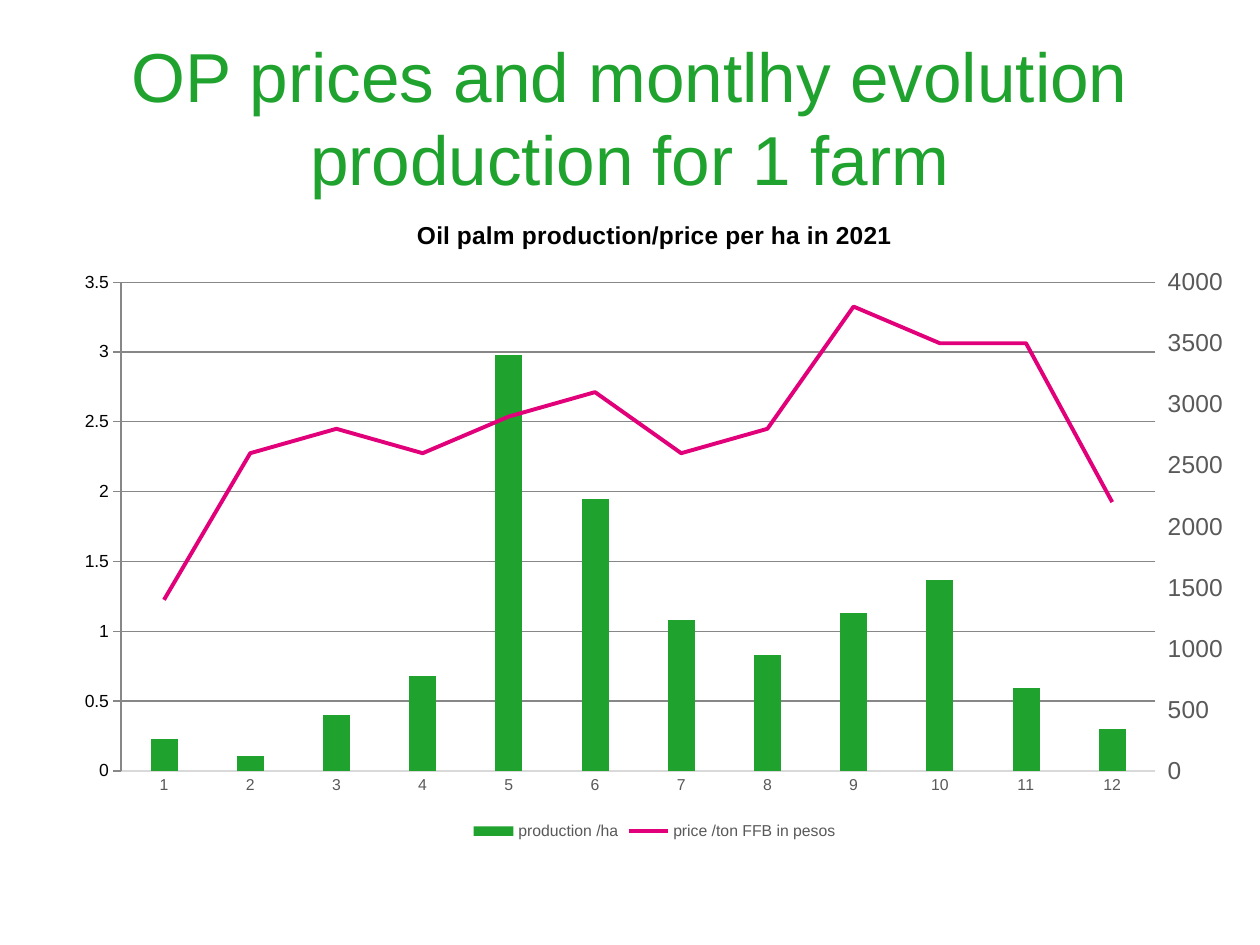
import copy
from dataclasses import dataclass
from typing import Any

import lxml.etree
import pptx
import pptx.chart.axis
import pptx.chart.data
import pptx.dml.color
import pptx.enum.chart
import pptx.enum.text
import pptx.oxml
import pptx.oxml.ns
import pptx.util

Inches = pptx.util.Inches
qn = pptx.oxml.ns.qn
TickMark = pptx.enum.chart.XL_TICK_MARK

COLORS = {
    "green": "1FA22E",
    "pink": "E2007A",
    "black": "000000",
    "label": "595959",
    "rule": "D9D9D9",
}
FONT = "Arial"


@dataclass
class Box:
    left: float
    top: float
    width: float
    height: float

    def lengths(self) -> list[int]:
        return [Inches(v) for v in (self.left, self.top, self.width, self.height)]


@dataclass
class AxisStyle:
    size: float
    tick: Any
    has_line: bool = False
    maximum: float | None = None
    step: float | None = None


TITLE_BOX = Box(0.5, 0.3, 9, 1.25)
CHART_BOX = Box(0.5, 1.55, 9.39, 5.16)
PLOT_BOX = Box(0.96, 2.24, 8.21, 3.88)

PRODUCTION = [0.23, 0.11, 0.4, 0.68, 2.98, 1.95, 1.08, 0.83, 1.13, 1.37, 0.59, 0.3]
PRICES = [1400, 2600, 2800, 2600, 2900, 3100, 2600, 2800, 3800, 3500, 3500, 2200]


def rgb(name: str) -> pptx.dml.color.RGBColor:
    return pptx.dml.color.RGBColor.from_string(COLORS[name])


def style_font(font: Any, size: float, color: str, bold: bool = False) -> None:
    values = {"name": FONT, "size": pptx.util.Pt(size), "bold": bold}
    for attribute, value in values.items():
        setattr(font, attribute, value)
    font.color.rgb = rgb(color)


def style_line(line: Any, color: str, width: float) -> None:
    line.color.rgb = rgb(color)
    line.width = pptx.util.Pt(width)


def style_axis(axis: Any, style: AxisStyle) -> None:
    values = {"major_tick_mark": style.tick, "minor_tick_mark": TickMark.NONE}
    if style.maximum is not None:
        values |= {"minimum_scale": 0, "maximum_scale": style.maximum,
                   "major_unit": style.step}
    for attribute, value in values.items():
        setattr(axis, attribute, value)
    style_font(axis.tick_labels.font, style.size, "label")
    if style.has_line:
        style_line(axis.format.line, "rule", 0.75)
    else:
        axis.format.line.fill.background()


def add_title(slide: Any) -> None:
    frame = slide.shapes.add_textbox(*TITLE_BOX.lengths()).text_frame
    frame.word_wrap = True
    frame.vertical_anchor = pptx.enum.text.MSO_ANCHOR.MIDDLE
    paragraph = frame.paragraphs[0]
    paragraph.alignment = pptx.enum.text.PP_ALIGN.CENTER
    run = paragraph.add_run()
    run.text = "OP prices and montlhy evolution production for 1 farm"
    style_font(run.font, 39.6, "green")


def move_price_to_right_axis(chart: Any) -> Any:
    """Turn the second series into a line on its own axes; return its value axis."""
    bar_chart = next(chart.element.iter(qn("c:barChart")))
    plot_area = bar_chart.getparent()
    price = bar_chart.findall(qn("c:ser"))[1]
    for bar_setting in price.findall(qn("c:invertIfNegative")):
        price.remove(bar_setting)

    line_chart = pptx.oxml.parse_xml(
        f'<c:lineChart {pptx.oxml.ns.nsdecls("c")}><c:grouping val="standard"/>'
        '<c:varyColors val="0"/><c:marker val="1"/>'
        '<c:axId val="5001"/><c:axId val="5002"/></c:lineChart>')
    line_chart.insert(2, price)
    bar_chart.addnext(line_chart)

    category = copy.deepcopy(plot_area.find(qn("c:catAx")))
    value = copy.deepcopy(plot_area.find(qn("c:valAx")))
    for axis, own, other in ((category, "5001", "5002"), (value, "5002", "5001")):
        axis.find(qn("c:axId")).set("val", own)
        axis.find(qn("c:crossAx")).set("val", other)
    value.find(qn("c:axPos")).set("val", "r")
    value.find(qn("c:crosses")).set("val", "max")
    plot_area.find(qn("c:valAx")).addnext(value)
    value.addnext(category)
    pptx.chart.axis.CategoryAxis(category).visible = False
    right_axis = pptx.chart.axis.ValueAxis(value)
    right_axis.has_major_gridlines = False
    return right_axis


def place_plot(chart: Any) -> None:
    plot_area = next(chart.element.iter(qn("c:plotArea")))
    for old in plot_area.findall(qn("c:layout")):
        plot_area.remove(old)
    layout = pptx.oxml.parse_xml(f'<c:layout {pptx.oxml.ns.nsdecls("c")}/>')
    manual = lxml.etree.SubElement(layout, qn("c:manualLayout"))
    values = {
        "layoutTarget": "inner", "xMode": "edge", "yMode": "edge",
        "x": (PLOT_BOX.left - CHART_BOX.left) / CHART_BOX.width,
        "y": (PLOT_BOX.top - CHART_BOX.top) / CHART_BOX.height,
        "w": PLOT_BOX.width / CHART_BOX.width,
        "h": PLOT_BOX.height / CHART_BOX.height,
    }
    for tag, value in values.items():
        lxml.etree.SubElement(manual, qn(f"c:{tag}")).set("val", str(value))
    plot_area.insert(0, layout)


def add_price_chart(slide: Any) -> None:
    data = pptx.chart.data.CategoryChartData()
    data.categories = [str(month) for month in range(1, 13)]
    data.add_series("production /ha", PRODUCTION)
    data.add_series("price /ton FFB in pesos", PRICES)
    chart = slide.shapes.add_chart(
        pptx.enum.chart.XL_CHART_TYPE.COLUMN_CLUSTERED, *CHART_BOX.lengths(), data).chart
    style_font(chart.font, 10, "black")

    # Chart title and legend
    chart.has_title = True
    title = chart.chart_title.text_frame
    title.text = "Oil palm production/price per ha in 2021"
    style_font(title.paragraphs[0].runs[0].font, 14, "black", bold=True)
    chart.has_legend = True
    chart.legend.position = pptx.enum.chart.XL_LEGEND_POSITION.BOTTOM
    chart.legend.include_in_layout = False
    style_font(chart.legend.font, 9, "label")

    # Axes
    right_axis = move_price_to_right_axis(chart)
    style_axis(chart.category_axis, AxisStyle(9, TickMark.NONE, has_line=True))
    style_axis(chart.value_axis, AxisStyle(12, TickMark.NONE, maximum=3.5, step=0.5))
    style_axis(right_axis, AxisStyle(14, TickMark.OUTSIDE, maximum=4000, step=500))
    style_line(chart.value_axis.major_gridlines.format.line, "rule", 0.75)

    # Production columns and price line
    columns, lines = chart.plots
    for attribute, value in {"gap_width": 219, "overlap": -27,
                             "vary_by_categories": False}.items():
        setattr(columns, attribute, value)
    fill = columns.series[0].format.fill
    fill.solid()
    fill.fore_color.rgb = rgb("green")
    price = lines.series[0]
    price.smooth = False
    price.marker.style = pptx.enum.chart.XL_MARKER_STYLE.NONE
    style_line(price.format.line, "pink", 2.25)
    place_plot(chart)


def main() -> None:
    presentation = pptx.Presentation()
    presentation.slide_width = Inches(10)
    presentation.slide_height = Inches(7.5)
    slide = presentation.slides.add_slide(presentation.slide_layouts[6])
    add_title(slide)
    add_price_chart(slide)
    presentation.save("out.pptx")


if __name__ == "__main__":
    main()
